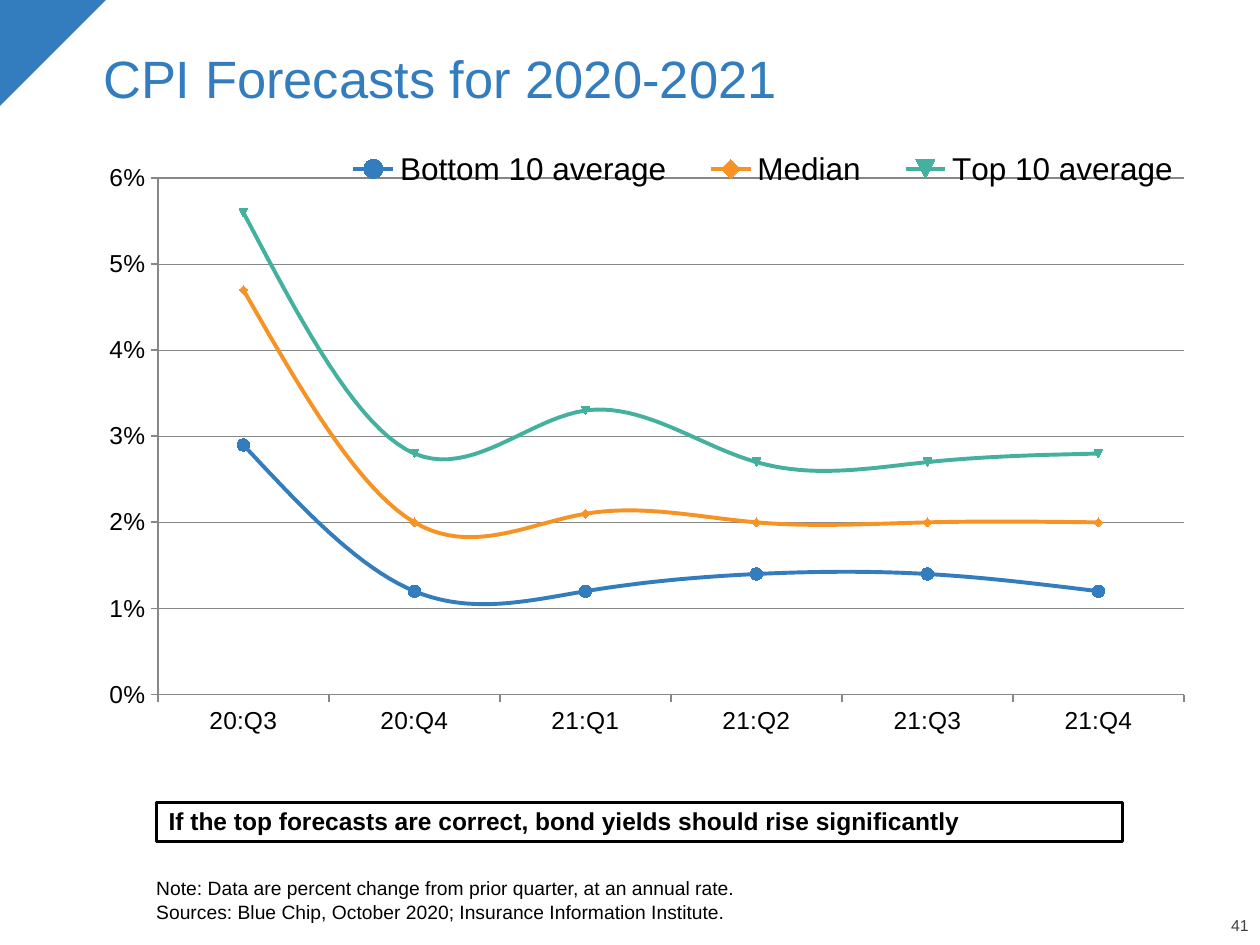
import pptx
import pptx.chart.data
import pptx.dml.color
import pptx.enum.chart
import pptx.enum.shapes
import pptx.enum.text
import pptx.oxml
import pptx.util
from pptx.util import Inches, Pt

BLUE, BLACK, GRAY = "337DBE", "000000", "878787"
ALIGN = pptx.enum.text.PP_ALIGN
ANCHOR = pptx.enum.text.MSO_ANCHOR
QUARTERS = ["20:Q3", "20:Q4", "21:Q1", "21:Q2", "21:Q3", "21:Q4"]
SERIES = [
    ("Bottom 10 average", BLUE, [0.029, 0.012, 0.012, 0.014, 0.014, 0.012]),
    ("Median", "F69322", [0.047, 0.02, 0.021, 0.02, 0.02, 0.02]),
    ("Top 10 average", "43B19E", [0.056, 0.028, 0.033, 0.027, 0.027, 0.028]),
]


def color(code):
    return pptx.dml.color.RGBColor.from_string(code)


def style(font, size, code=BLACK, bold=False):
    font.name, font.size, font.bold = "Arial", Pt(size), bold
    font.color.rgb = color(code)


def write(slide, box, lines, size, code=BLACK, bold=False, inset=True,
          anchor=ANCHOR.BOTTOM, align=ALIGN.LEFT, gap=0):
    shape = slide.shapes.add_textbox(*map(Inches, box))
    frame = shape.text_frame
    frame.word_wrap = True
    frame.vertical_anchor = anchor
    if not inset:
        frame.margin_left = frame.margin_right = 0
        frame.margin_top = frame.margin_bottom = 0
    frame.text = "\n".join(lines)
    for i, para in enumerate(frame.paragraphs):
        para.alignment, para.line_spacing = align, 0.9
        para.space_before = Pt(gap if i else 0)
        for run in para.runs:
            style(run.font, size, code, bold)
    return shape


def corner(slide, box):
    shape = slide.shapes.add_shape(
        pptx.enum.shapes.MSO_SHAPE.RIGHT_TRIANGLE, *map(Inches, box))
    shape.rotation = 90
    shape.shadow.inherit = False
    shape.fill.solid()
    shape.fill.fore_color.rgb = color(BLUE)
    shape.line.fill.background()


def callout(slide, box, text):
    shape = write(slide, box, [text], 14, bold=True, anchor=ANCHOR.MIDDLE)
    shape.line.color.rgb = color(BLACK)
    shape.line.width = Pt(1.5)


def layout(x, y, w, h, inner=False):
    """Return a manual layout, in fractions of the chart."""
    target = '<c:layoutTarget val="inner"/>' if inner else ""
    modes = '<c:xMode val="edge"/><c:yMode val="edge"/>'
    sizes = "".join(f'<c:{key} val="{val}"/>'
                    for key, val in zip("xywh", (x, y, w, h)))
    space = "http://schemas.openxmlformats.org/drawingml/2006/chart"
    return pptx.oxml.parse_xml(
        f'<c:layout xmlns:c="{space}"><c:manualLayout>'
        f'{target}{modes}{sizes}</c:manualLayout></c:layout>')


def set_axis(axis):
    axis.major_tick_mark = pptx.enum.chart.XL_TICK_MARK.OUTSIDE
    axis.minor_tick_mark = pptx.enum.chart.XL_TICK_MARK.NONE
    axis.format.line.color.rgb = color(GRAY)
    axis.format.line.width = Pt(1)
    style(axis.tick_labels.font, 14)


def set_lines(plot):
    for series, (name, code, vals) in zip(plot.series, SERIES):
        series.smooth = True
        series.format.line.color.rgb = color(code)
        series.format.line.width = Pt(2.25)
    # The other series keep their automatic markers.
    marker = plot.series[0].marker
    marker.style = pptx.enum.chart.XL_MARKER_STYLE.CIRCLE
    marker.size = 7
    marker.format.fill.solid()
    marker.format.fill.fore_color.rgb = color(BLUE)
    marker.format.line.color.rgb = color(BLUE)


def set_legend(chart):
    chart.has_legend = True
    legend = chart.legend
    legend.position = pptx.enum.chart.XL_LEGEND_POSITION.TOP
    legend.include_in_layout = True
    style(legend.font, 18)
    for old in legend._element.findall(pptx.oxml.ns.qn("c:layout")):
        legend._element.remove(old)
    place = legend._element.find(pptx.oxml.ns.qn("c:legendPos"))
    place.addnext(layout(0.23, 0, 0.77, 0.07))


def forecast(slide, box):
    data = pptx.chart.data.CategoryChartData(number_format="0%")
    data.categories = QUARTERS
    for name, code, vals in SERIES:
        data.add_series(name, vals)
    chart = slide.shapes.add_chart(
        pptx.enum.chart.XL_CHART_TYPE.LINE_MARKERS,
        *map(Inches, box), data).chart
    chart.has_title = False
    style(chart.font, 18)
    plot = chart.plots[0]
    plot.vary_by_categories = False
    set_lines(plot)
    set_axis(chart.category_axis)
    axis = chart.value_axis
    set_axis(axis)
    axis.minimum_scale, axis.maximum_scale, axis.major_unit = 0, 0.06, 0.01
    axis.tick_labels.number_format = "0%"
    axis.tick_labels.number_format_is_linked = False
    axis.has_major_gridlines = True
    axis.major_gridlines.format.line.color.rgb = color(GRAY)
    axis.major_gridlines.format.line.width = Pt(0.75)
    set_legend(chart)
    area = chart._chartSpace.chart.plotArea
    for old in area.findall(pptx.oxml.ns.qn("c:layout")):
        area.remove(old)
    area.insert(0, layout(0.09, 0.05, 0.89, 0.84, inner=True))


def main():
    deck = pptx.Presentation()
    deck.slide_width, deck.slide_height = Inches(10), Inches(7.5)
    slide = deck.slides.add_slide(deck.slide_layouts[6])
    corner(slide, (0, 0, 0.84, 0.84))
    write(slide, (9.43, 7.29, 0.48, 0.13), ["41"], 9, "404040",
          inset=False, align=ALIGN.RIGHT)
    write(slide, (0.72, 0.25, 8.92, 0.67), ["CPI Forecasts for 2020-2021"],
          30, BLUE)
    write(slide, (1.24, 6.88, 8.4, 0.45), [
        "Note: Data are percent change from prior quarter, at an annual rate.",
        "Sources: Blue Chip, October 2020; Insurance Information Institute.",
    ], 11, inset=False, gap=2)
    forecast(slide, (0.43, 1.17, 9.15, 4.88))
    callout(slide, (1.24, 6.37, 7.67, 0.31),
            "If the top forecasts are correct, "
            "bond yields should rise significantly")
    deck.save("out.pptx")


if __name__ == "__main__":
    main()
